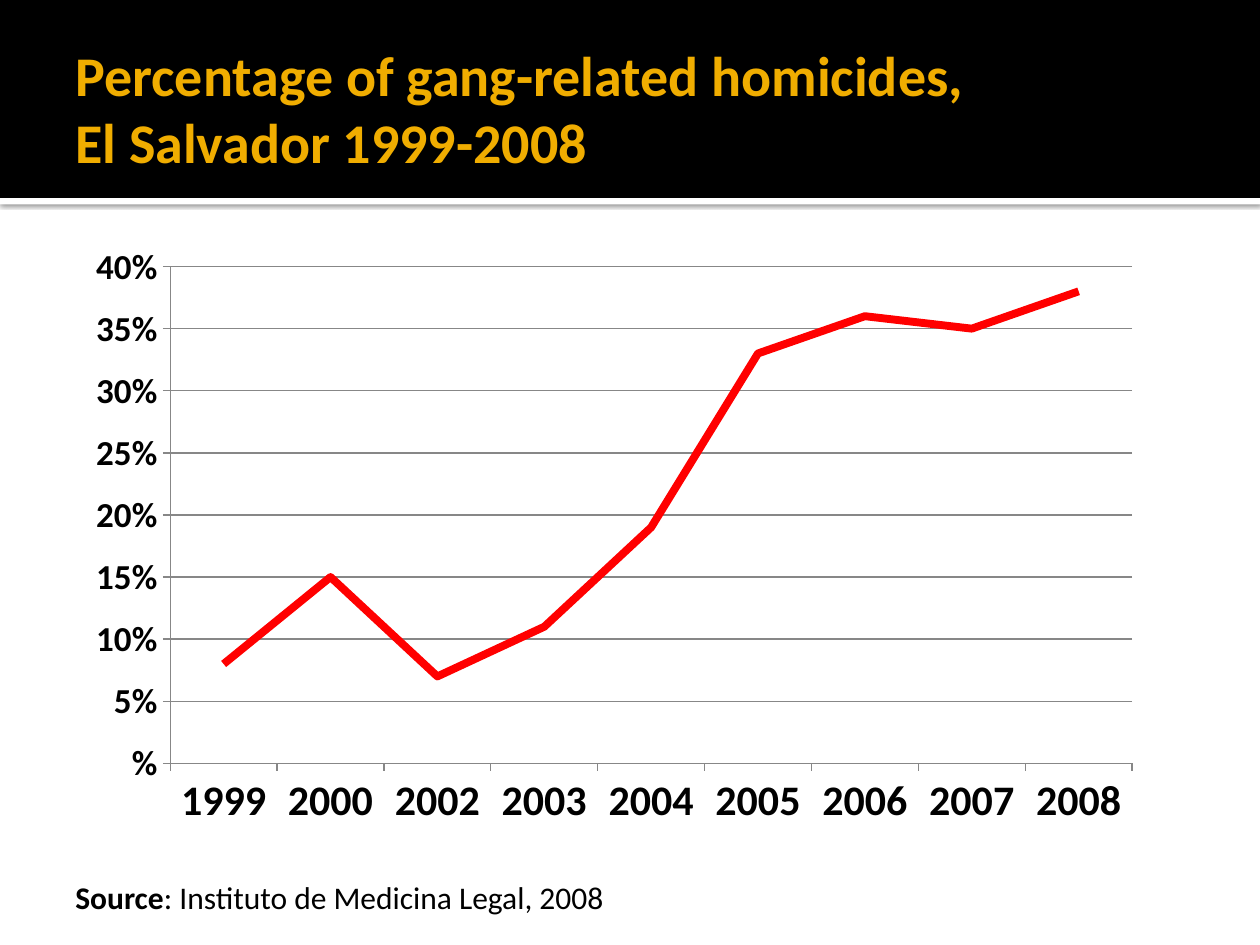
from lxml import etree
from pptx import Presentation
from pptx import oxml
from pptx import util as u
from pptx.chart.data import CategoryChartData
from pptx.dml.color import RGBColor
from pptx.enum import chart as ch, shapes, text
from pptx.oxml import ns

YEARS = ["1999", "2000", "2002", "2003", "2004", "2005", "2006", "2007", "2008"]
SHARES = [8, 15, 7, 11, 19, 33, 36, 35, 38]


def rgb(code):
    return RGBColor.from_string(code)


class Deck:
    face = "Calibri"
    ink = "000000"
    paper = "FFFFFF"
    gold = "F0AD00"
    red = "FF0000"
    grid = "878787"

    def __init__(self, slide):
        self.slide = slide

    def font(self, font, size, color, bold=False):
        font.name = self.face
        font.size = u.Pt(size)
        font.bold = bold
        font.color.rgb = rgb(color)

    def bar(self, top, height, color):
        """Add a borderless band across the whole slide."""
        bar = self.slide.shapes.add_shape(
            shapes.MSO_SHAPE.RECTANGLE, 0, u.Cm(top), u.Cm(25.4), u.Cm(height))
        bar.shadow.inherit = False
        bar.fill.solid()
        bar.fill.fore_color.rgb = rgb(color)
        bar.line.fill.background()
        return bar

    def shade(self, shape):
        """Give a shape a soft shadow straight below it."""
        effects = shape._element.spPr.find(ns.qn("a:effectLst"))
        effects.append(oxml.parse_xml(
            f'<a:outerShdw {ns.nsdecls("a")} blurRad="31750" dist="10160" '
            f'dir="5400000" algn="tl" rotWithShape="0"><a:srgbClr val="{self.ink}">'
            '<a:alpha val="60000"/></a:srgbClr></a:outerShdw>'))

    def text(self, box, runs, size, color, wrap=True, right=0.25):
        """Add one paragraph made of (words, bold) runs."""
        frame = self.slide.shapes.add_textbox(*map(u.Cm, box)).text_frame
        frame.word_wrap = wrap
        frame.margin_right = u.Cm(right)
        para = frame.paragraphs[0]
        self.font(para.font, size, color, runs[0][1])
        for n, (words, bold) in enumerate(runs):
            for k, line in enumerate(words.split("\n")):
                if k:
                    para.add_line_break()
                run = para.add_run()
                run.text = line
                self.font(run.font, size, color, bold)
        return frame

    def axis(self, axis, size):
        self.font(axis.tick_labels.font, size, self.ink, True)
        axis.major_tick_mark = ch.XL_TICK_MARK.OUTSIDE
        axis.minor_tick_mark = ch.XL_TICK_MARK.NONE
        self.rule(axis.format.line, 0.75, self.grid)

    def rule(self, line, width, color):
        line.width = u.Pt(width)
        line.color.rgb = rgb(color)

    def chart(self, box, plot, cats, name, vals):
        """Add a line chart; plot is the inner plot area as fractions."""
        data = CategoryChartData()
        data.categories = cats
        data.add_series(name, vals)
        chart = self.slide.shapes.add_chart(
            ch.XL_CHART_TYPE.LINE, *map(u.Cm, box), data).chart
        chart.has_legend = chart.has_title = False
        self.font(chart.font, 20, self.ink)
        chart.plots[0].vary_by_categories = False

        series = chart.plots[0].series[0]
        series.smooth = False
        series.marker.style = ch.XL_MARKER_STYLE.NONE
        self.rule(series.format.line, 4.5, self.red)

        self.axis(chart.category_axis, 24)
        value = chart.value_axis
        self.axis(value, 20)
        value.minimum_scale, value.maximum_scale, value.major_unit = 0, 40, 5
        value.tick_labels.number_format = r"#\%"
        value.tick_labels.number_format_is_linked = False
        value.has_major_gridlines = True
        self.rule(value.major_gridlines.format.line, 0.75, self.grid)
        self.place(chart, plot)

    def place(self, chart, plot):
        """Fix the inner plot area of a chart."""
        area = chart._chartSpace.find(".//" + ns.qn("c:plotArea"))
        for old in area.findall(ns.qn("c:layout")):
            area.remove(old)
        layout = oxml.parse_xml(f'<c:layout {ns.nsdecls("c")}/>')
        manual = etree.SubElement(layout, ns.qn("c:manualLayout"))
        marks = [("layoutTarget", "inner"), ("xMode", "edge"), ("yMode", "edge")]
        for tag, val in marks + list(zip("xywh", plot)):
            etree.SubElement(manual, ns.qn("c:" + tag)).set("val", str(val))
        area.insert(0, layout)


def main():
    prs = Presentation()
    prs.slide_width, prs.slide_height = u.Cm(25.4), u.Cm(19.05)
    deck = Deck(prs.slides.add_slide(prs.slide_layouts[6]))

    deck.shade(deck.bar(3.99, 0.13, deck.paper))
    deck.bar(0, 3.99, deck.ink)
    title = deck.text(
        (1.27, 0.43, 22.86, 3.48),
        [("Percentage of gang-related homicides, \nEl Salvador 1999-2008", True)],
        32, deck.gold, right=0.13)
    title.vertical_anchor = text.MSO_ANCHOR.MIDDLE

    deck.chart((1.47, 4.65, 21.79, 12.07), (0.09, 0.06, 0.89, 0.83),
               YEARS, "Series 1", SHARES)
    source = deck.text(
        (1.27, 17.58, 11.48, 1.02),
        [("Source", True), (": Instituto de Medicina Legal, 2008", False)],
        18, deck.ink, wrap=False)
    source.auto_size = text.MSO_AUTO_SIZE.SHAPE_TO_FIT_TEXT
    prs.save("out.pptx")


if __name__ == "__main__":
    main()
